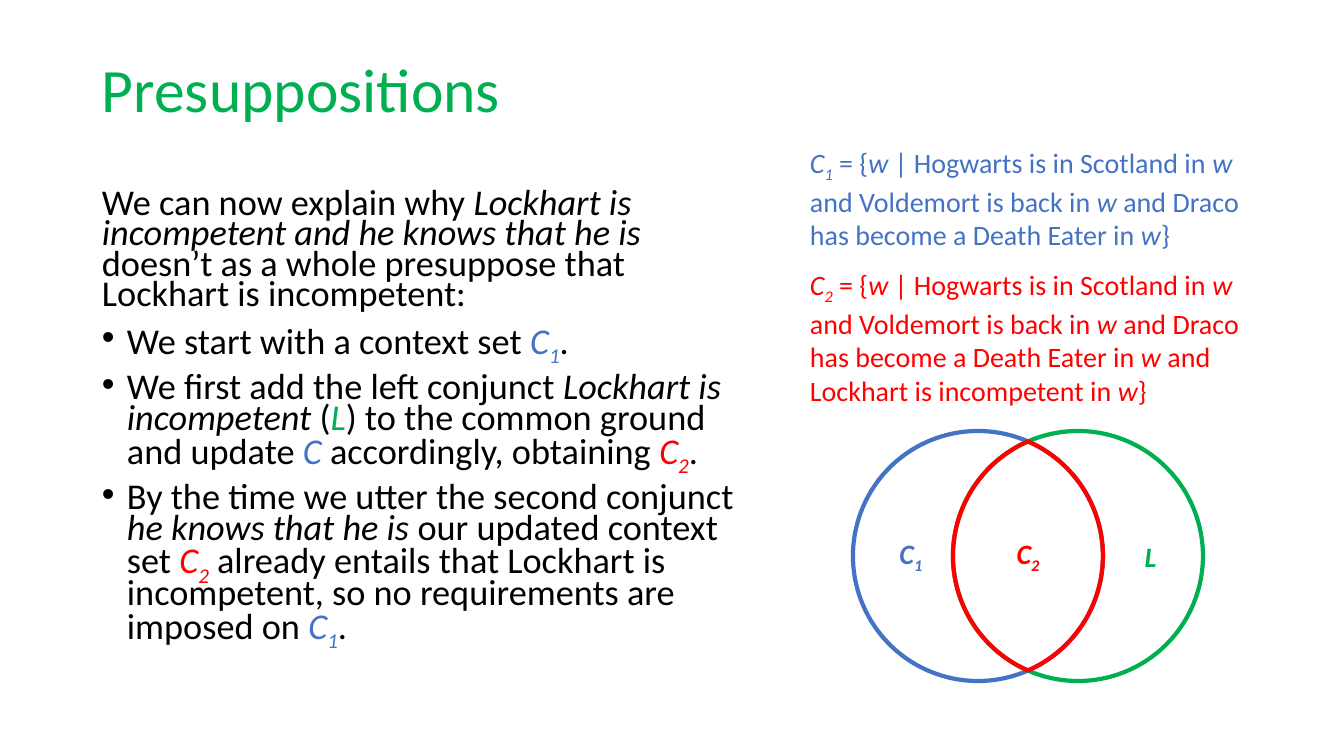
from math import acos, cos, pi, sin
from typing import NamedTuple

from lxml.etree import SubElement
from pptx import Presentation
from pptx.dml.color import RGBColor
from pptx.enum.shapes import MSO_SHAPE as Shape
from pptx.enum.text import MSO_ANCHOR as Anchor, PP_ALIGN as Align
from pptx.oxml.ns import qn
from pptx.util import Emu, Pt

BLACK = RGBColor(0x00, 0x00, 0x00)
BLUE = RGBColor(0x44, 0x72, 0xC4)
GREEN = RGBColor(0x00, 0xB0, 0x50)
RED = RGBColor(0xFF, 0x00, 0x00)


class Run(NamedTuple):
    text: str
    color: RGBColor = BLACK
    italic: bool = False
    sub: bool = False


def italic(text, color=BLACK):
    return Run(text, color, italic=True)


def symbol(letter, index, color):
    """A set name with its subscript."""
    return [italic(letter, color), Run(index, color, italic=True, sub=True)]


C1 = symbol("C", "1", BLUE)
C2 = symbol("C", "2", RED)
L = [italic("L", GREEN)]


def context_set(name, color, *ending):
    """Definition of a context set; ending holds its closing pieces, alternately in w and upright."""
    pieces = ["w", " | Hogwarts is in Scotland in ", "w", " and Voldemort is back in ", "w",
              " and Draco has become a Death Eater in ", *ending]
    return [*name, Run(" = {", color),
            *(Run(piece, color, italic=i % 2 == 0) for i, piece in enumerate(pieces))]


class SlideBuilder:
    FONT = "Calibri"
    EMU_PER_PX = 914400 / 100.8
    LINE_WIDTH = Pt(3)
    BULLET_INDENT = 25

    def __init__(self, width, height):
        self.deck = Presentation()
        self.deck.slide_width, self.deck.slide_height = self.px(width), self.px(height)
        self.slide = self.deck.slides.add_slide(self.deck.slide_layouts[6])

    def px(self, length):
        return Emu(round(length * self.EMU_PER_PX))

    def add_runs(self, paragraph, runs, size, bold=False):
        for piece in runs:
            run = paragraph.add_run()
            run.text = piece.text
            font = run.font
            font.name, font.size, font.bold = self.FONT, Pt(size), bold
            font.italic, font.color.rgb = piece.italic, piece.color
            if piece.sub:
                run._r.get_or_add_rPr().set("baseline", "-25000")

    def bullet(self, paragraph):
        properties = paragraph._p.get_or_add_pPr()
        indent = self.px(self.BULLET_INDENT)
        properties.set("marL", str(indent))
        properties.set("indent", str(-indent))
        SubElement(properties, qn("a:buFont")).set("typeface", "Arial")
        SubElement(properties, qn("a:buChar")).set("char", "•")

    def text(self, box, paragraphs, size, spacing=1.0, before=0, anchor=Anchor.TOP, bullets_from=None):
        """Text box; paragraphs from index bullets_from on get bullets."""
        frame = self.slide.shapes.add_textbox(*map(self.px, box)).text_frame
        frame.word_wrap, frame.vertical_anchor = True, anchor
        for i, runs in enumerate(paragraphs):
            paragraph = frame.add_paragraph() if i else frame.paragraphs[0]
            paragraph.line_spacing, paragraph.space_before = spacing, Pt(before)
            if bullets_from is not None and i >= bullets_from:
                self.bullet(paragraph)
            self.add_runs(paragraph, runs, size)

    def outline(self, shape, label, color, align):
        shape.shadow.inherit = False
        shape.fill.background()
        shape.line.color.rgb, shape.line.width = color, self.LINE_WIDTH
        shape.text_frame.vertical_anchor = Anchor.MIDDLE
        paragraph = shape.text_frame.paragraphs[0]
        paragraph.alignment = align
        self.add_runs(paragraph, label, 20, bold=True)

    def circle(self, x, y, radius, label, color, align):
        box = (x - radius, y - radius, 2 * radius, 2 * radius)
        shape = self.slide.shapes.add_shape(Shape.OVAL, *map(self.px, box))
        self.outline(shape, label, color, align)

    def lens(self, left_x, right_x, y, radius, label, color, steps=48):
        """Overlap of two equal circles, traced along both arcs."""
        half_angle = acos((right_x - left_x) / 2 / radius)
        points = []
        for center, middle in ((left_x, 0), (right_x, pi)):
            for i in range(steps):
                angle = middle + half_angle * (2 * i / steps - 1)
                points.append((self.px(center + radius * cos(angle)),
                               self.px(y + radius * sin(angle))))
        builder = self.slide.shapes.build_freeform(*points[0])
        builder.add_line_segments(points[1:], close=True)
        self.outline(builder.convert_to_shape(), label, color, Align.CENTER)


def main():
    page = SlideBuilder(1344, 756)

    page.text((92, 0, 1159, 186), [[Run("Presuppositions", GREEN)]], 44,
              spacing=0.9, anchor=Anchor.MIDDLE)

    explanation = [
        [Run("We can now explain why "),
         italic("Lockhart is incompetent and he knows that he is"),
         Run(" doesn’t as a whole presuppose that Lockhart is incompetent:")],
        [Run("We start with a context set "), *C1, Run(".")],
        [Run("We first add the left conjunct "), italic("Lockhart is incompetent "),
         Run("("), *L, Run(") to the common ground and update "), italic("C", BLUE),
         Run(" accordingly, obtaining "), *C2, Run(".")],
        [Run("By the time we utter the second conjunct "), italic("he knows that he is"),
         Run(" our updated context set "), *C2,
         Run(" already entails that Lockhart is incompetent, so no requirements are imposed on "),
         *C1, Run(".")],
    ]
    page.text((92, 186, 678, 495), explanation, 25.9, spacing=0.7, before=10, bullets_from=1)

    page.text((800, 141, 452, 112), [context_set(C1, BLUE, "w", "}")], 20)
    page.text((800, 263, 452, 146),
              [context_set(C2, RED, "w ", "and Lockhart is incompetent in ", "w", "}")], 20)

    context_x, lockhart_x, center_y, radius = 978, 1078, 556, 125
    page.circle(context_x, center_y, radius, C1, BLUE, Align.LEFT)
    page.circle(lockhart_x, center_y, radius, L, GREEN, Align.RIGHT)
    page.lens(context_x, lockhart_x, center_y, radius, C2, RED)

    page.deck.save("out.pptx")


if __name__ == "__main__":
    main()
